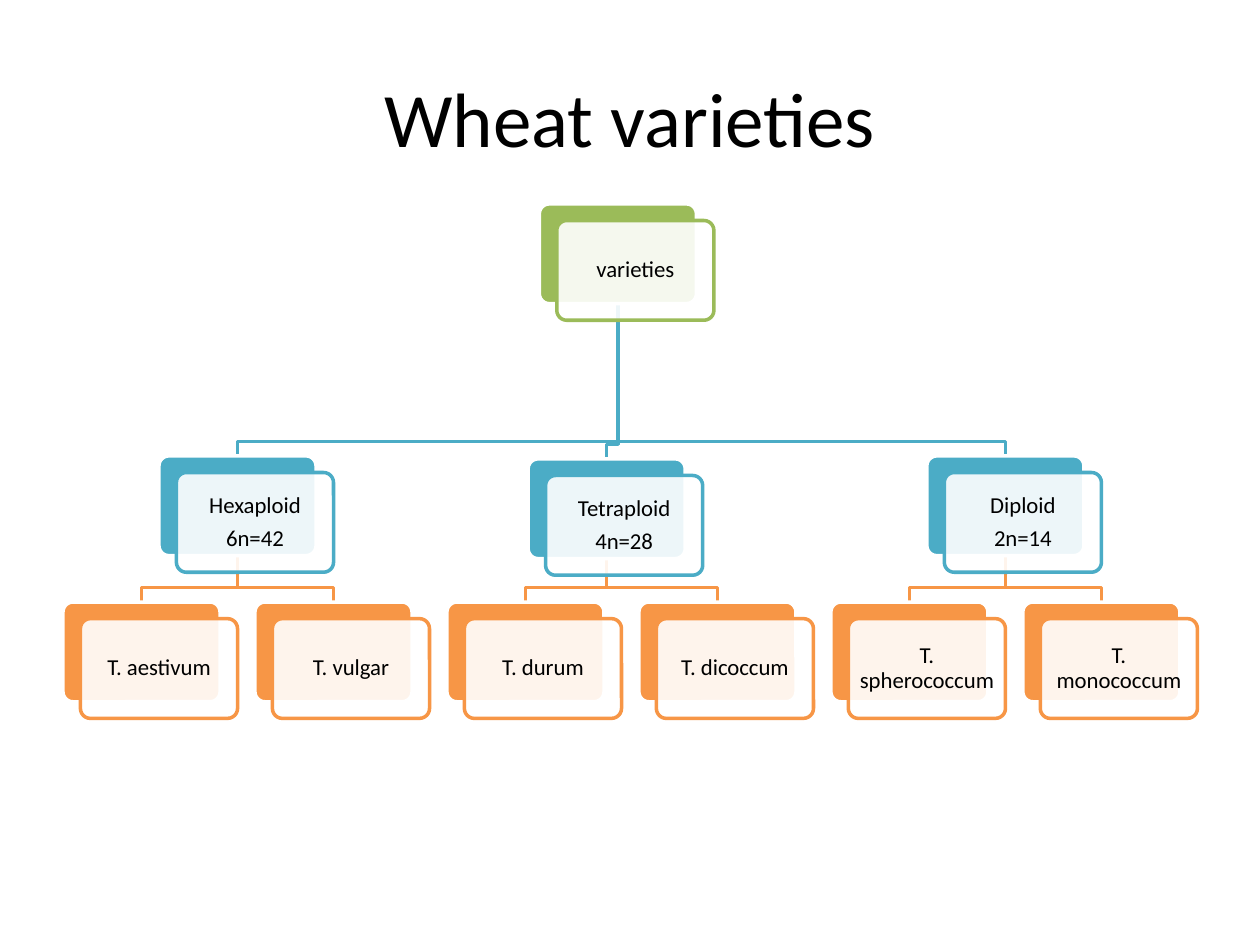
"""Build the wheat varieties hierarchy slide."""
from lxml import etree
from pptx import Presentation
from pptx.dml.color import RGBColor
from pptx.enum import shapes, text
from pptx.oxml import ns
from pptx.util import Pt

BLACK = RGBColor(0x00, 0x00, 0x00)
WHITE = RGBColor(0xFF, 0xFF, 0xFF)
GREEN = RGBColor(0x9B, 0xBB, 0x59)
TEAL = RGBColor(0x4B, 0xAC, 0xC6)
ORANGE = RGBColor(0xF7, 0x96, 0x46)

FONT = "Calibri"
CARD_W, CARD_H = 89.8, 57
SHIFT_X, SHIFT_Y = 9.98, 9.5
INSET = 3.4
LEFT, PITCH = 36, 109.7
BEND = 8.3
ROOT = (308.2, 116.5)
LEAF_TOP = 344

PLOIDIES = [
    (["Hexaploid", "6n=42"], (LEFT + PITCH * 0.5, 260.5),
     ["T. aestivum", "T. vulgar"]),
    (["Tetraploid", "4n=28"], (301.8, 262.2),
     ["T. durum", "T. dicoccum"]),
    (["Diploid", "2n=14"], (LEFT + PITCH * 4.5, 260.5),
     ["T. spherococcum", "T. monococcum"]),
]


def add_text(tf, lines, size):
    tf.word_wrap = True
    tf.vertical_anchor = text.MSO_ANCHOR.MIDDLE
    for i, line in enumerate(lines):
        p = tf.paragraphs[0] if i == 0 else tf.add_paragraph()
        p.alignment = text.PP_ALIGN.CENTER
        r = p.add_run()
        r.text = line
        r.font.name = FONT
        r.font.size = Pt(size)
        r.font.color.rgb = BLACK


def add_title(s, title):
    sp = s.shapes.add_textbox(Pt(36), Pt(21.6), Pt(648), Pt(90))
    add_text(sp.text_frame, [title], 44)


def add_box(s, x, y, fill, line):
    sp = s.shapes.add_shape(shapes.MSO_SHAPE.ROUNDED_RECTANGLE,
                            Pt(x), Pt(y), Pt(CARD_W), Pt(CARD_H))
    sp.adjustments[0] = 0.1
    sp.shadow.inherit = False
    sp.fill.solid()
    sp.fill.fore_color.rgb = fill
    sp.line.color.rgb = line
    sp.line.width = Pt(2)
    return sp


def add_card(s, pos, lines, color):
    x, y = pos
    add_box(s, x, y, color, WHITE)
    sp = add_box(s, x + SHIFT_X, y + SHIFT_Y, WHITE, color)
    clr = sp.fill._xPr.find(ns.qn("a:solidFill"))[0]
    etree.SubElement(clr, ns.qn("a:alpha"), val="90000")
    tf = sp.text_frame
    tf.margin_left = tf.margin_right = Pt(INSET)
    tf.margin_top = tf.margin_bottom = Pt(INSET)
    add_text(tf, lines, 13)
    for p in tf.paragraphs:
        p.line_spacing = 0.9
        p.space_after = Pt(4.55)


def add_branch(s, parent, child, color):
    x1, y1 = parent[0] + CARD_W / 2, parent[1] + CARD_H
    x2, y2 = child[0] + CARD_W / 2, child[1]
    bend = y2 - BEND
    fb = s.shapes.build_freeform(Pt(x1), Pt(y1))
    fb.add_line_segments([(Pt(x1), Pt(bend)), (Pt(x2), Pt(bend)),
                          (Pt(x2), Pt(y2))], close=False)
    sp = fb.convert_to_shape()
    sp.shadow.inherit = False
    sp.fill.background()
    sp.line.color.rgb = color
    sp.line.width = Pt(2)


def main():
    prs = Presentation()
    prs.slide_width, prs.slide_height = Pt(720), Pt(540)
    s = prs.slides.add_slide(prs.slide_layouts[6])
    add_title(s, "Wheat varieties")

    cards = [(ROOT, ["varieties"], GREEN)]
    branches = []
    column = 0
    for lines, pos, species in PLOIDIES:
        cards.append((pos, lines, TEAL))
        branches.append((ROOT, pos, TEAL))
        for name in species:
            leaf = (LEFT + PITCH * column, LEAF_TOP)
            cards.append((leaf, [name], ORANGE))
            branches.append((pos, leaf, ORANGE))
            column += 1

    for branch in branches:
        add_branch(s, *branch)
    for card in cards:
        add_card(s, *card)
    prs.save("out.pptx")


if __name__ == "__main__":
    main()
